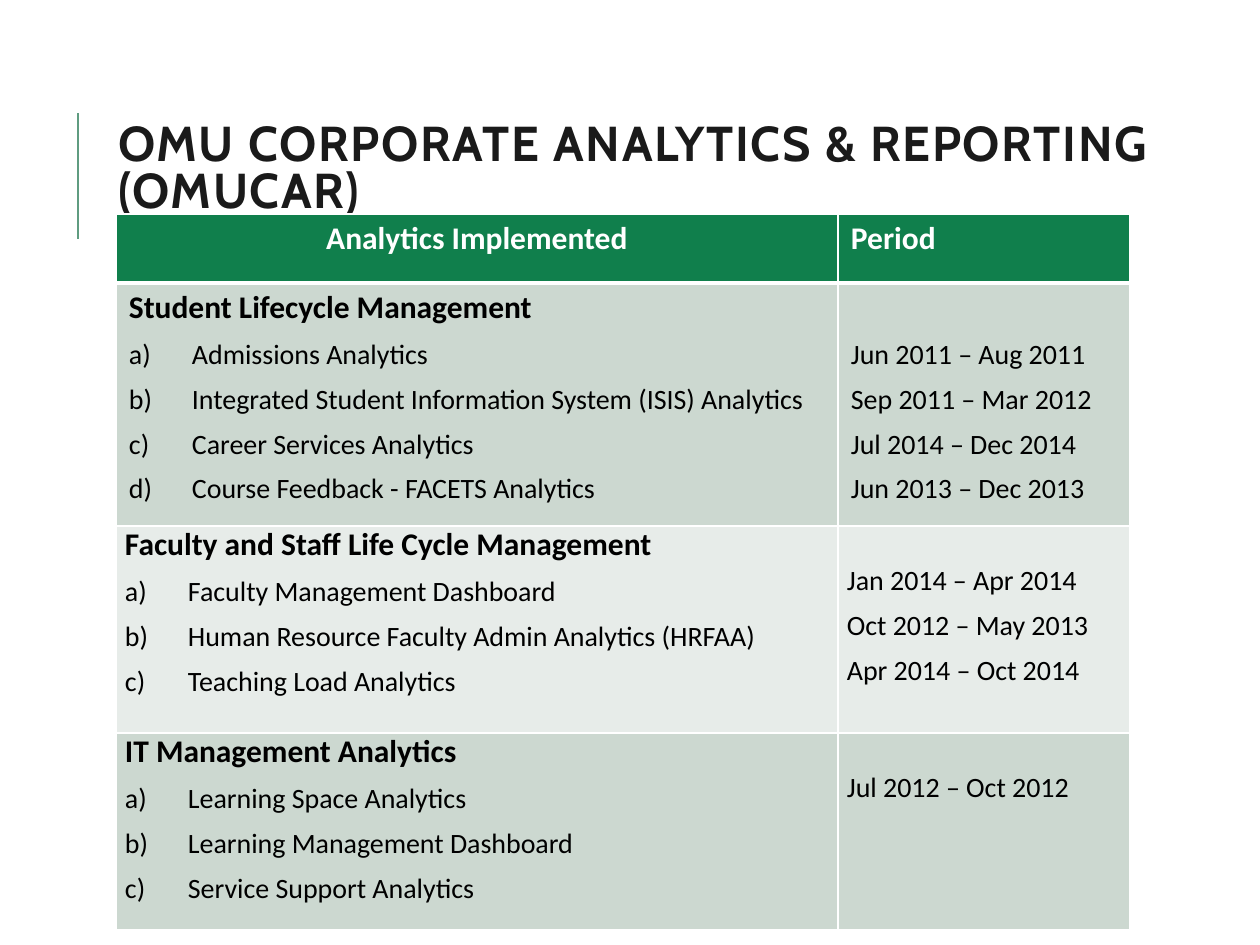
"""Build the corporate analytics and reporting slide."""
from lxml import etree
from pptx import Presentation
from pptx import util as u
from pptx.dml.color import RGBColor
from pptx.enum import shapes, text
from pptx.oxml.ns import qn

PX = u.Inches(1) // 126
COLORS = {"header": "107F4C", "dark": "CCD8D0", "light": "E7ECE9",
          "white": "FFFFFF", "black": "000000", "title": "1A1A1A", "rule": "5F9C80"}
COLUMNS = (722, 292)
ROWS = (69, 243, 207, 197)
WIDE, NARROW = (13, 6), (9, 0)
SECTIONS = [
    ("Student Lifecycle Management", "dark", WIDE, 55,
     ["Admissions Analytics", "Integrated Student Information System (ISIS) Analytics",
      "Career Services Analytics", "Course Feedback - FACETS Analytics"],
     ["Jun 2011 – Aug 2011", "Sep 2011 – Mar 2012",
      "Jul 2014 – Dec 2014", "Jun 2013 – Dec 2013"]),
    ("Faculty and Staff Life Cycle Management", "light", NARROW, 38,
     ["Faculty Management Dashboard", "Human Resource Faculty Admin Analytics (HRFAA)",
      "Teaching Load Analytics"],
     ["Jan 2014 – Apr 2014", "Oct 2012 – May 2013", "Apr 2014 – Oct 2014"]),
    ("IT Management Analytics", "dark", NARROW, 38,
     ["Learning Space Analytics", "Learning Management Dashboard",
      "Service Support Analytics"],
     ["Jul 2012 – Oct 2012"]),
]


def px(*lengths):
    """Turn pixel lengths into EMU."""
    return [u.Emu(length * PX) for length in lengths]


def rgb(name):
    """Look up a named colour."""
    return RGBColor.from_string(COLORS[name])


def style(para, size, color, bold=False, face="Calibri"):
    """Format every run of a paragraph."""
    for span in para.runs:
        span.font.name, span.font.size, span.font.bold = face, u.Pt(size), bold
        span.font.color.rgb = rgb(color)


def add_title(page, words):
    """Add the spaced bold title."""
    box = page.shapes.add_textbox(*px(106, 105, 1123, 132))
    frame = box.text_frame
    frame.word_wrap = True
    frame.vertical_anchor = text.MSO_ANCHOR.MIDDLE
    frame.text = words
    para = frame.paragraphs[0]
    para.line_spacing = 0.8
    style(para, 28, "title", True, "Cabin")
    para.runs[0].font._element.set("spc", "100")


def add_rule(page):
    """Add the vertical rule beside the title."""
    rule = page.shapes.add_connector(shapes.MSO_CONNECTOR.STRAIGHT, *px(78, 239, 78, 113))
    rule.line.color.rgb = rgb("rule")
    rule.line.width = u.Pt(1.5)
    etree.SubElement(rule._element.spPr, qn("a:effectLst"))


def paint_cell(cell, color, insets, top=None, thick=None):
    """Set the insets, white borders and fill of a cell."""
    side, edge = insets
    cell.margin_left, cell.margin_right, cell.margin_bottom = px(side, side, edge)
    cell.margin_top = px(edge if top is None else top)[0]
    properties = cell._tc.get_or_add_tcPr()
    for tag in ("lnL", "lnR", "lnT", "lnB"):
        width = u.Pt(3 if tag == thick else 1)
        line = etree.SubElement(properties, qn(f"a:{tag}"), w=str(width))
        fill = etree.SubElement(line, qn("a:solidFill"))
        etree.SubElement(fill, qn("a:srgbClr"), val=COLORS["white"])
    cell.fill.solid()
    cell.fill.fore_color.rgb = rgb(color)


def write_lines(cell, lines):
    """Write evenly spaced lines into a cell."""
    cell.text_frame.text = "\n".join(lines)
    for para in cell.text_frame.paragraphs:
        para.space_after = u.Pt(6)
        style(para, 16, "black")


def number_para(para):
    """Give a paragraph a lettered hanging indent."""
    properties = para._p.get_or_add_pPr()
    indent = px(63)[0]
    properties.set("marL", str(indent))
    properties.set("indent", str(-indent))
    etree.SubElement(properties, qn("a:buFont"), typeface="+mj-lt")
    etree.SubElement(properties, qn("a:buAutoNum"), type="alphaLcParenR")


def fill_header(cells):
    """Write the header row."""
    for cell, words in zip(cells, ("Analytics Implemented", "Period")):
        paint_cell(cell, "header", WIDE, thick="lnB")
        cell.text = words
        style(cell.text_frame.paragraphs[0], 18, "white", True)
    cells[0].text_frame.paragraphs[0].alignment = text.PP_ALIGN.CENTER


def fill_section(cells, section, thick):
    """Write one section with its items and periods."""
    heading, color, insets, date_top, items, periods = section
    topic, period = cells
    paint_cell(topic, color, insets, thick=thick)
    paint_cell(period, color, insets, date_top, thick)
    write_lines(topic, [heading, *items])
    write_lines(period, periods)
    first, *rest = topic.text_frame.paragraphs
    style(first, 18, "black", True)
    for para in rest:
        number_para(para)


def add_analytics_table(page):
    """Add the table of analytics and periods."""
    frame = page.shapes.add_table(len(ROWS), len(COLUMNS),
                                  *px(116, 214, sum(COLUMNS), sum(ROWS)))
    table = frame.table
    for column, width in zip(table.columns, px(*COLUMNS)):
        column.width = width
    for row, height in zip(table.rows, px(*ROWS)):
        row.height = height
    header, *body = [list(row.cells) for row in table.rows]
    fill_header(header)
    for index, (cells, section) in enumerate(zip(body, SECTIONS)):
        fill_section(cells, section, "lnT" if index == 0 else None)


def main():
    """Build and save the deck."""
    deck = Presentation()
    deck.slide_width, deck.slide_height = px(1260, 945)
    page = deck.slides.add_slide(deck.slide_layouts[6])
    add_rule(page)
    add_title(page, "OMU CORPORATE ANALYTICS & REPORTING (OMUCAR)")
    add_analytics_table(page)
    deck.save("out.pptx")


if __name__ == "__main__":
    main()
